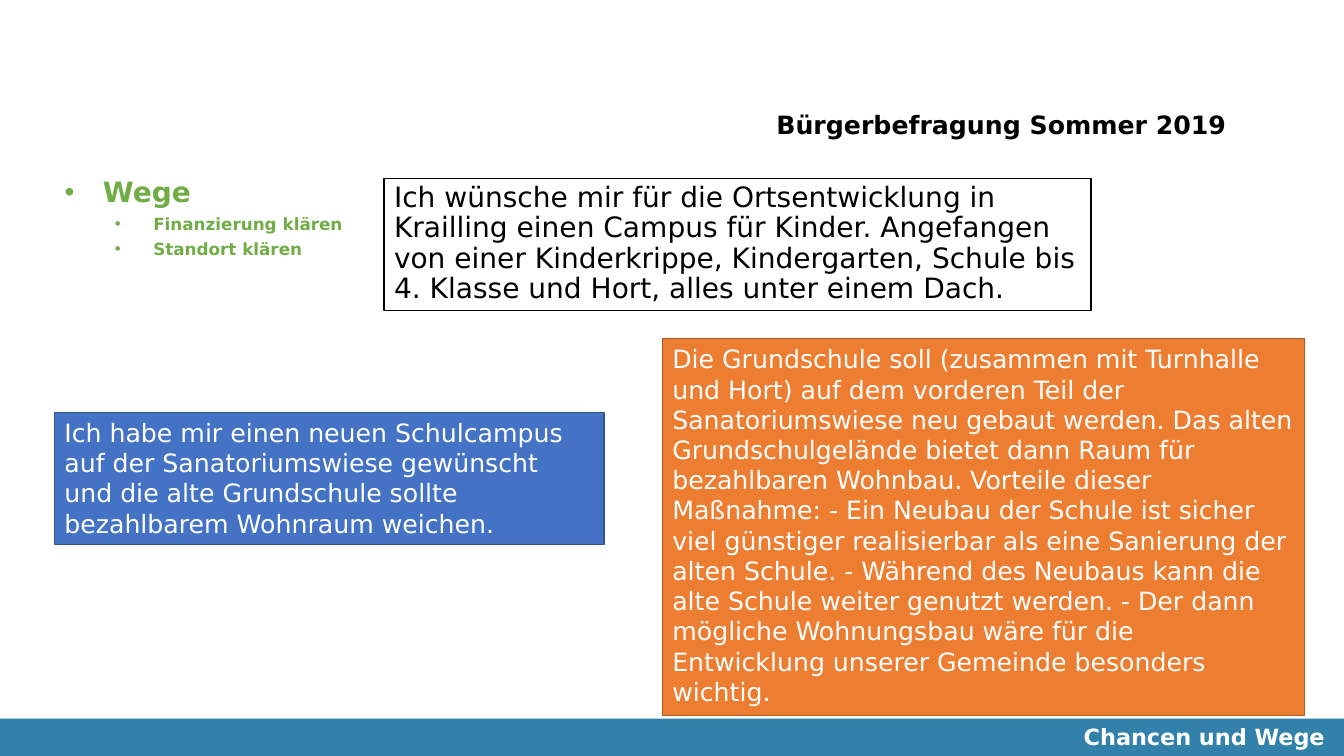
from lxml import etree
from pptx import Presentation
from pptx.dml.color import RGBColor
from pptx.enum.shapes import MSO_SHAPE
from pptx.enum.text import MSO_ANCHOR, MSO_AUTO_SIZE, PP_ALIGN
from pptx.oxml.ns import qn
from pptx.util import Inches, Pt

RECTANGLE = MSO_SHAPE.RECTANGLE
TOP = MSO_ANCHOR.TOP
NO_AUTOFIT = MSO_AUTO_SIZE.NONE
LEFT = PP_ALIGN.LEFT

FONT = "DejaVu Sans"
BLACK = RGBColor(0x00, 0x00, 0x00)
WHITE = RGBColor(0xFF, 0xFF, 0xFF)
GREEN = RGBColor(0x70, 0xAD, 0x47)
TEAL = RGBColor(0x31, 0x81, 0xAA)
BLUE = RGBColor(0x44, 0x72, 0xC4)
DARK_BLUE = RGBColor(0x32, 0x54, 0x91)
ORANGE = RGBColor(0xED, 0x7D, 0x31)
DARK_ORANGE = RGBColor(0xAF, 0x5C, 0x24)


def style(paragraph, size, color, bold=False):
    paragraph.alignment = LEFT
    paragraph.font.name = FONT
    paragraph.font.size = Pt(size)
    paragraph.font.bold = bold
    paragraph.font.color.rgb = color


def place(shape, left, top, width, height):
    shape.left, shape.top = Inches(left), Inches(top)
    shape.width, shape.height = Inches(width), Inches(height)
    frame = shape.text_frame
    frame.auto_size = NO_AUTOFIT
    frame.vertical_anchor = TOP
    return frame


prs = Presentation()
prs.slide_width = Inches(13.33)
prs.slide_height = Inches(7.5)
slide = prs.slides.add_slide(prs.slide_layouts[1])
shapes = slide.shapes

footer_band = shapes.add_shape(RECTANGLE, 0, Inches(7.13), prs.slide_width, Inches(0.37))
footer_band.shadow.inherit = False
footer_band.fill.solid()
footer_band.fill.fore_color.rgb = TEAL
footer_band.line.fill.background()

heading = place(shapes.title, 7.6, 1.03, 4.7, 0.4)
heading.word_wrap = False
heading.text = "Bürgerbefragung Sommer 2019"
style(heading.paragraphs[0], 18, BLACK, True)

ways = place(slide.placeholders[1], 0.54, 1.72, 3.04, 4.3)
ways.text = "Wege\nFinanzierung klären\nStandort klären"
for index, way in enumerate(ways.paragraphs):
    way.level = min(index, 1)
    way.line_spacing = 0.9
    way.space_before = Pt(5 if index else 0)
    properties = way._p.get_or_add_pPr()
    properties.set("marL", str(Inches(0.88 if index else 0.38)))
    properties.set("indent", str(Inches(-0.38)))
    etree.SubElement(properties, qn("a:buChar"), char="•")
    style(way, 12 if index else 20, GREEN, True)

footer = place(shapes.add_textbox(0, 0, 0, 0), 10.65, 7.13, 2.61, 0.37)
footer.word_wrap = False
footer.text = "Chancen und Wege"
style(footer.paragraphs[0], 16, WHITE, True)

quotes = [
    ((3.81, 1.77, 7.01, 1.31), WHITE, BLACK, BLACK, 20, 0.9,
     "Ich wünsche mir für die Ortsentwicklung in Krailling einen Campus für Kinder. "
     "Angefangen von einer Kinderkrippe, Kindergarten, Schule bis 4. Klasse und Hort, "
     "alles unter einem Dach."),
    ((0.54, 4.09, 5.45, 1.31), BLUE, DARK_BLUE, WHITE, 18, 1.0,
     "Ich habe mir einen neuen Schulcampus auf der Sanatoriumswiese gewünscht und die "
     "alte Grundschule sollte bezahlbarem Wohnraum weichen."),
    ((6.57, 3.36, 6.37, 3.74), ORANGE, DARK_ORANGE, WHITE, 18, 1.0,
     "Die Grundschule soll (zusammen mit Turnhalle und Hort) auf dem vorderen Teil der "
     "Sanatoriumswiese neu gebaut werden. Das alten Grundschulgelände bietet dann Raum "
     "für bezahlbaren Wohnbau. Vorteile dieser Maßnahme: - Ein Neubau der Schule ist "
     "sicher viel günstiger realisierbar als eine Sanierung der alten Schule. - Während "
     "des Neubaus kann die alte Schule weiter genutzt werden. - Der dann mögliche "
     "Wohnungsbau wäre für die Entwicklung unserer Gemeinde besonders wichtig."),
]
for bounds, fill, outline, text_color, size, spacing, wording in quotes:
    quote = shapes.add_shape(RECTANGLE, 0, 0, 0, 0)
    quote.shadow.inherit = False
    quote.fill.solid()
    quote.fill.fore_color.rgb = fill
    quote.line.color.rgb = outline
    quote.line.width = Pt(1)
    frame = place(quote, *bounds)
    frame.word_wrap = True
    frame.text = wording
    frame.paragraphs[0].line_spacing = spacing
    style(frame.paragraphs[0], size, text_color)

prs.save("out.pptx")
